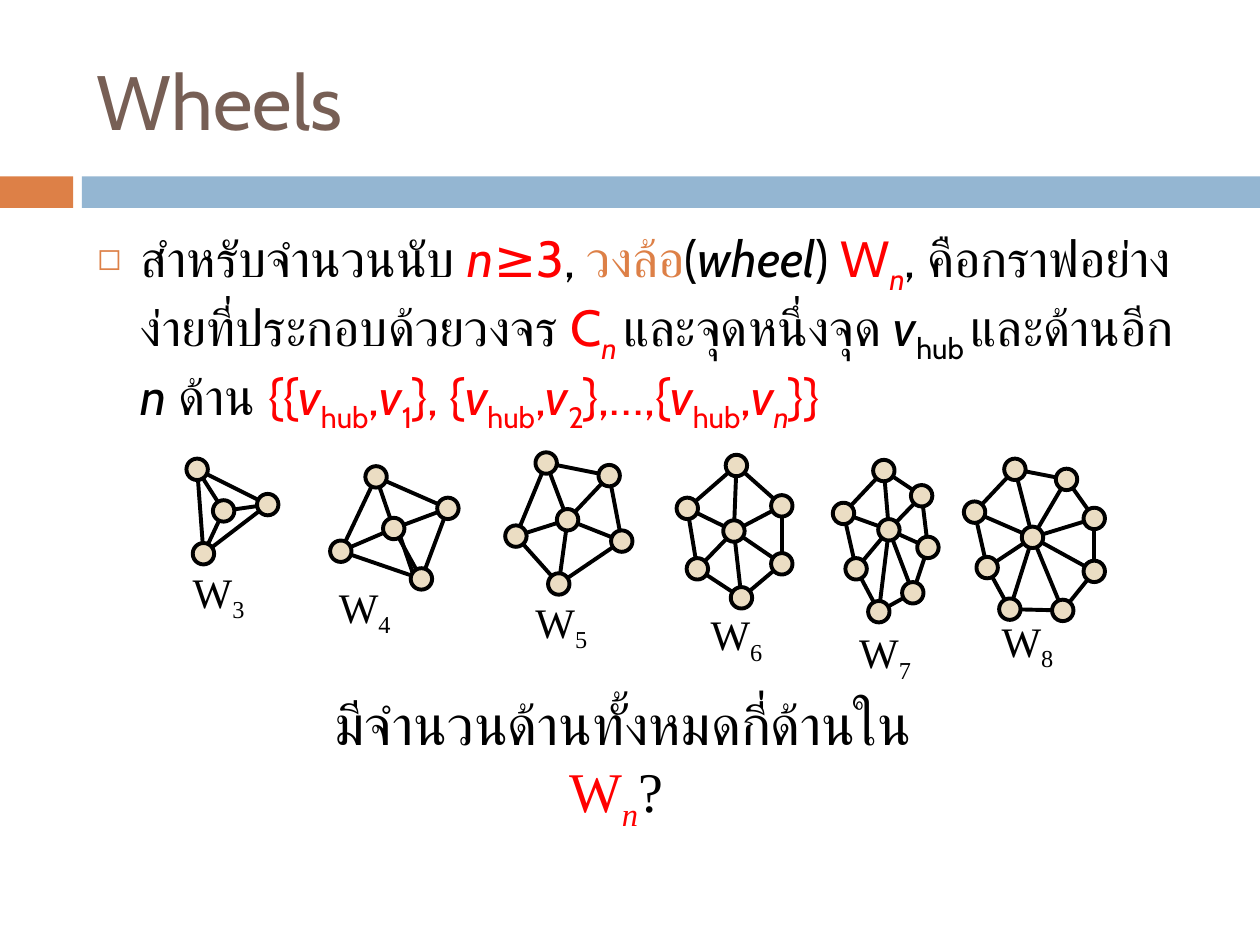
from lxml import etree
from pptx import Presentation
from pptx.dml.color import RGBColor
from pptx.enum.shapes import MSO_CONNECTOR, MSO_SHAPE
from pptx.enum.text import MSO_ANCHOR, PP_ALIGN
from pptx.oxml.ns import qn
from pptx.util import Inches, Pt

RECTANGLE, OVAL = MSO_SHAPE.RECTANGLE, MSO_SHAPE.OVAL
STRAIGHT = MSO_CONNECTOR.STRAIGHT
TOP, MIDDLE = MSO_ANCHOR.TOP, MSO_ANCHOR.MIDDLE
LEFT, CENTER = PP_ALIGN.LEFT, PP_ALIGN.CENTER

BLACK = RGBColor(0x00, 0x00, 0x00)
RED = RGBColor(0xFF, 0x00, 0x00)
ORANGE = RGBColor(0xDD, 0x80, 0x47)
BLUE = RGBColor(0x94, 0xB6, 0xD2)
BROWN = RGBColor(0x77, 0x5F, 0x55)
CREAM = RGBColor(0xEB, 0xDD, 0xC3)

SANS, SERIF = "Cabin", "Times New Roman"
NODE = 0.17
STROKE = Pt(2.25)

# Text runs: wording, colour, style (i = italic, s = subscript)
TITLE = [("Wheels", BROWN, "")]
DEFINITION = [
    ("สำหรับจำนวนนับ ", BLACK, ""), ("n", RED, "i"), ("≥3", RED, ""),
    (", ", BLACK, ""), ("วงล้อ", ORANGE, ""), ("(", BLACK, ""),
    ("wheel", BLACK, "i"), (") ", BLACK, ""), ("W", RED, ""), ("n", RED, "is"),
    (", คือกราฟอย่างง่ายที่ประกอบด้วยวงจร ", BLACK, ""),
    ("C", RED, ""), ("n ", RED, "is"), ("และจุดหนึ่งจุด ", BLACK, ""),
    ("v", BLACK, "i"), ("hub ", BLACK, "s"), ("และด้านอีก ", BLACK, ""),
    ("n ", BLACK, "i"), ("ด้าน ", BLACK, ""),
]
# Spoke set: opening text, rim index, style of that index
SPOKES = [("{{", "1", "s"), ("}, {", "2", "s"), ("},…,{", "n", "is")]
for opening, index, index_style in SPOKES:
    DEFINITION += [
        (opening, RED, ""), ("v", RED, "i"), ("hub", RED, "s"),
        (",", RED, ""), ("v", RED, "i"), (index, RED, index_style),
    ]
DEFINITION.append(("}}", RED, ""))
QUESTION = [
    ("มีจำนวนด้านทั้งหมดกี่ด้านใน ", BLACK, ""),
    ("W", RED, ""), ("n", RED, "is"), ("? ", BLACK, ""),
]

# Top-left corners of the nodes; each rim is listed in cycle order
WHEELS = [
    {"label": (1.42, 4.47), "hub": (1.69, 3.97),
     "rim": [(1.48, 3.64), (2.04, 3.92), (1.53, 4.31)]},
    {"label": (2.58, 4.59), "hub": (3.04, 4.11),
     "rim": [(2.90, 3.70), (3.47, 3.95), (3.26, 4.51), (2.62, 4.29)]},
    {"label": (4.14, 4.71), "hub": (4.42, 4.04),
     "rim": [(4.25, 3.59), (4.75, 3.69), (4.85, 4.21), (4.35, 4.55),
             (4.01, 4.17)]},
    {"label": (5.53, 4.81), "hub": (5.74, 4.13),
     "rim": [(5.76, 3.61), (6.12, 3.93), (6.12, 4.39), (5.80, 4.66),
             (5.45, 4.43), (5.37, 3.95)]},
    {"label": (6.71, 4.95), "hub": (6.97, 4.12),
     "rim": [(6.93, 3.65), (7.23, 3.85), (7.28, 4.26), (7.16, 4.62),
             (6.89, 4.77), (6.71, 4.43), (6.61, 3.99)]},
    {"label": (7.84, 4.86), "hub": (8.11, 4.18),
     "rim": [(7.97, 3.64), (8.38, 3.72), (8.60, 4.03), (8.60, 4.45),
             (8.35, 4.76), (7.93, 4.75), (7.75, 4.42), (7.65, 3.98)]},
]
DOUBLED_SPOKE = ((3.15, 4.18), (3.30, 4.62))


def add_text(page, bounds, runs, size, font, align=LEFT, anchor=MIDDLE, wrap=True):
    box = page.shapes.add_textbox(*map(Inches, bounds))
    frame = box.text_frame
    frame.word_wrap = wrap
    frame.vertical_anchor = anchor
    para = frame.paragraphs[0]
    para.alignment = align
    for wording, color, style in runs:
        span = para.add_run()
        span.text = wording
        span.font.name = font
        span.font.size = Pt(size)
        span.font.color.rgb = color
        span.font.italic = "i" in style
        if "s" in style:
            span._r.get_or_add_rPr().set("baseline", "-25000")
    return para


def add_bullet(para):
    para.space_before = Pt(7)
    props = para._p.get_or_add_pPr()
    props.set("marL", str(Inches(0.35)))
    props.set("indent", str(-Inches(0.35)))
    color = etree.SubElement(props, qn("a:buClr"))
    etree.SubElement(color, qn("a:srgbClr"), val=str(ORANGE))
    etree.SubElement(props, qn("a:buSzPct"), val="60000")
    etree.SubElement(props, qn("a:buChar"), char="◻")


def add_solid(page, kind, bounds, color):
    shape = page.shapes.add_shape(kind, *map(Inches, bounds))
    shape.shadow.inherit = False
    shape.fill.solid()
    shape.fill.fore_color.rgb = color
    shape.line.fill.background()
    return shape


def add_node(page, corner):
    node = add_solid(page, OVAL, (*corner, NODE, NODE), CREAM)
    node.line.color.rgb = BLACK
    node.line.width = STROKE


def add_edge(page, start, end):
    edge = page.shapes.add_connector(STRAIGHT, *map(Inches, (*start, *end)))
    edge.line.color.rgb = BLACK
    edge.line.width = STROKE
    etree.SubElement(edge._element.spPr, qn("a:effectLst"))


def center(corner):
    return tuple(value + NODE / 2 for value in corner)


def add_wheel(page, hub, rim, label):
    for corner, following in zip(rim, rim[1:] + rim[:1]):
        add_edge(page, center(corner), center(following))
        add_edge(page, center(hub), center(corner))
    for corner in rim + [hub]:
        add_node(page, corner)
    name = [("W", BLACK, ""), (str(len(rim)), BLACK, "s")]
    add_text(page, (*label, 0.63, 0.5), name, 24, SERIF, CENTER, wrap=False)


def main():
    deck = Presentation()
    deck.slide_width, deck.slide_height = Inches(10), Inches(7.5)
    page = deck.slides.add_slide(deck.slide_layouts[6])

    add_solid(page, RECTANGLE, (0, 1.4, 0.58, 0.25), ORANGE)
    add_solid(page, RECTANGLE, (0.65, 1.4, 9.35, 0.25), BLUE)
    add_text(page, (0.67, 0.25, 8.92, 1.08), TITLE, 44, SANS)
    add_bullet(add_text(page, (0.67, 1.75, 8.92, 4.92), DEFINITION, 29, SANS,
                        anchor=TOP))
    add_edge(page, *DOUBLED_SPOKE)
    for wheel in WHEELS:
        add_wheel(page, **wheel)
    add_text(page, (2.53, 5.72, 4.83, 0.64), QUESTION, 32, SERIF, CENTER)

    deck.save("out.pptx")


if __name__ == "__main__":
    main()
